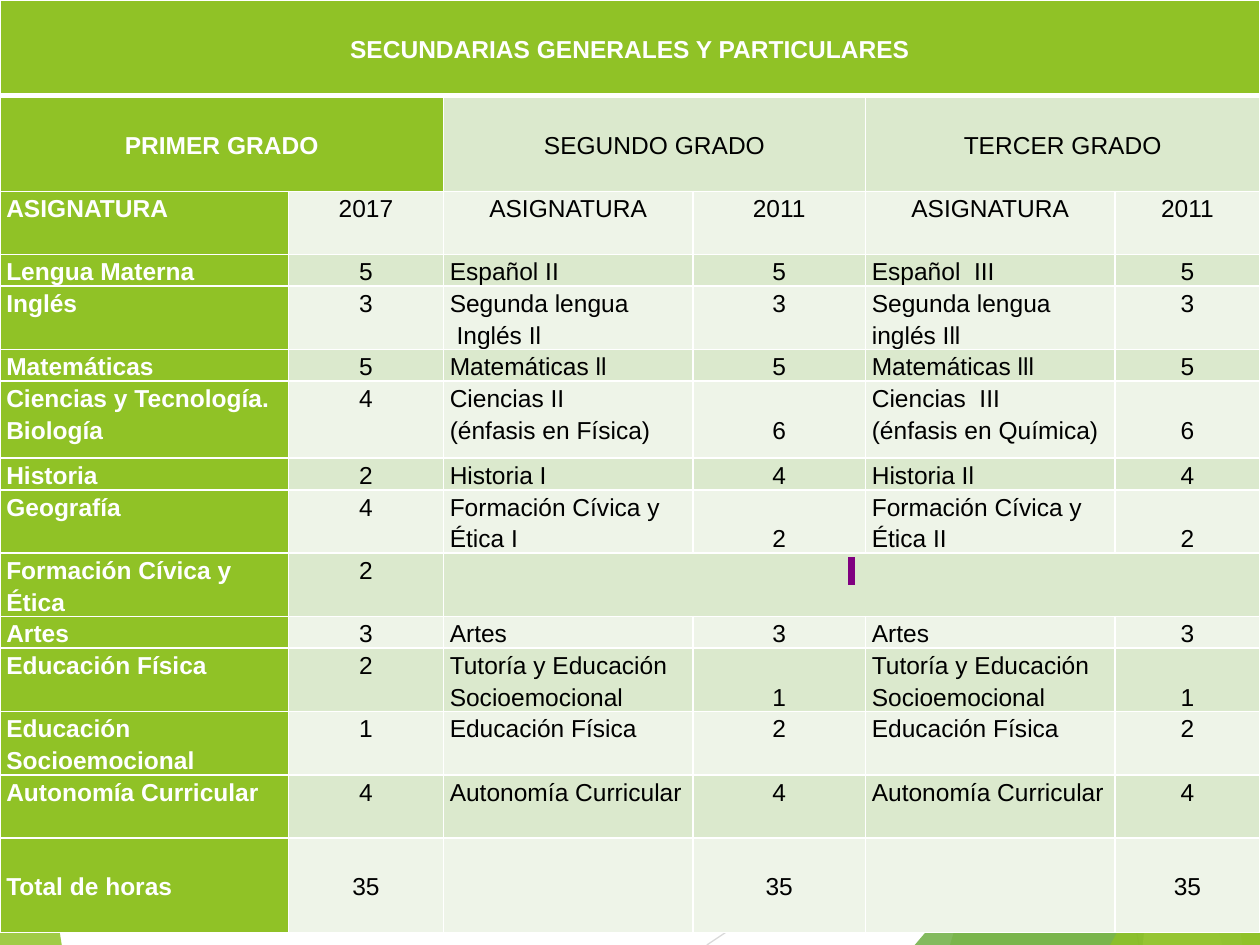
import pptx
import pptx.dml.color
import pptx.enum.shapes
import pptx.enum.text
import pptx.oxml
import pptx.oxml.ns
import pptx.util
from lxml import etree
from pptx.util import Inches

GREEN, PALE, PALER, WHITE, BLACK = "90C226", "DBE9CD", "EEF4E8", "FFFFFF", "000000"
ALIGN = pptx.enum.text.PP_ALIGN
ANCHOR = pptx.enum.text.MSO_ANCHOR

COLUMN_WIDTHS = [2.29, 1.23, 1.98, 1.37, 1.98, 1.15]
ROW_HEIGHTS = [0.76, 0.76, 0.5, 0.25, 0.5, 0.25, 0.61, 0.25,
               0.5, 0.5, 0.25, 0.5, 0.5, 0.5, 0.75]
ROWS = [
    ["SECUNDARIAS GENERALES Y PARTICULARES", "", "", "", "", ""],
    ["PRIMER GRADO", "", "SEGUNDO GRADO", "", "TERCER GRADO", ""],
    ["ASIGNATURA", "2017", "ASIGNATURA", "2011", "ASIGNATURA", "2011"],
    ["Lengua Materna", "5", "Español II", "5", "Español  III", "5"],
    ["Inglés", "3", "Segunda lengua\n Inglés Il", "3", "Segunda lengua  inglés Ill", "3"],
    ["Matemáticas", "5", "Matemáticas ll", "5", "Matemáticas lll", "5"],
    ["Ciencias y Tecnología. Biología", "4", "Ciencias II\n(énfasis en Física)", "6",
     "Ciencias  III\n(énfasis en Química)", "6"],
    ["Historia", "2", "Historia I", "4", "Historia Il", "4"],
    ["Geografía", "4", "Formación Cívica y Ética I", "2", "Formación Cívica y Ética II", "2"],
    ["Formación Cívica y Ética", "2", "", "", "", ""],
    ["Artes", "3", "Artes", "3", "Artes", "3"],
    ["Educación Física", "2", "Tutoría y Educación Socioemocional", "1",
     "Tutoría y Educación Socioemocional", "1"],
    ["Educación Socioemocional", "1", "Educación Física", "2", "Educación Física", "2"],
    ["Autonomía Curricular", "4", "Autonomía Curricular", "4", "Autonomía Curricular", "4"],
    ["Total de horas", "35", "", "35", "", "35"],
]
TITLE_ROW, GRADE_ROW, HEADING_ROW, GAP_ROW, TOTAL_ROW = 0, 1, 2, 9, 14
SECOND_LINE_ROWS = (6, 8, 11)  # hours of 2nd and 3rd grade sit on the second line
MERGES = [(TITLE_ROW, 0, 5), (GRADE_ROW, 0, 1), (GRADE_ROW, 2, 3), (GRADE_ROW, 4, 5),
          (GAP_ROW, 2, 5)]

GUIDE_LINES = [((5.61, 7.5), (10, 4.57), "D9D9D9"), ((7.7, 0), (9.04, 7.5), "BFBFBF")]
LEFT_FACET = ([(0, 4.39), (0.49, 7.5), (0, 7.5)], GREEN, 85)
RIGHT_FACETS = [
    ([(9.75, 0), (7.54, 7.5), (10, 7.5), (10, 0)], GREEN, 30),
    ([(7.88, 0), (9.19, 7.5), (10, 7.5), (10, 0)], GREEN, 20),
    ([(7.26, 7.5), (10, 4.29), (10, 7.5)], "54A021", 72),
    ([(7.67, 0), (9.7, 7.5), (10, 7.5), (10, 0)], "3F7819", 70),
    ([(9.81, 0), (9.07, 7.5), (10, 7.5), (10, 0)], "C0E474", 70),
    ([(8.83, 0), (9.86, 7.5), (10, 7.5), (10, 0)], GREEN, 65),
    ([(8.81, 7.5), (10, 5.35), (10, 7.5)], GREEN, 80),
]


def rgb(value):
    return pptx.dml.color.RGBColor.from_string(value)


def sub(parent, tag, **attrs):
    return etree.SubElement(parent, pptx.oxml.ns.qn(tag), attrs)


def add_facet(s, points, color, opacity):
    corners = [(Inches(x), Inches(y)) for x, y in points]
    builder = s.shapes.build_freeform(*corners[0], scale=1.0)
    builder.add_line_segments(corners[1:], close=True)
    sp = builder.convert_to_shape()
    sp.shadow.inherit = False
    sp.line.fill.background()
    sp.fill.solid()
    sp.fill.fore_color.rgb = rgb(color)
    clr = next(sp.fill._xPr.iter(pptx.oxml.ns.qn("a:srgbClr")))
    sub(clr, "a:alpha", val=str(opacity * 1000))


def add_line(s, start, end, color):
    line = s.shapes.add_connector(pptx.enum.shapes.MSO_CONNECTOR.STRAIGHT,
                                  *(Inches(v) for v in start + end))
    line.line.color.rgb = rgb(color)
    line.line.width = pptx.util.Pt(0.75)
    sub(line._element.spPr, "a:effectLst")


def set_text(tf, text, color=BLACK, bold=False, align=ALIGN.LEFT, size=14):
    for i, part in enumerate(text.split("\n")):
        p = tf.add_paragraph() if i else tf.paragraphs[0]
        p.alignment = align
        p.line_spacing = 1.15
        r = p.add_run()
        r.text = part
        r.font.name = "Arial"
        r.font.size = pptx.util.Pt(size)
        r.font.bold = bold
        r.font.color.rgb = rgb(color)


def highlight(r, color):
    mark = pptx.oxml.parse_xml(
        f'<a:highlight {pptx.oxml.ns.nsdecls("a")}><a:srgbClr val="{color}"/></a:highlight>')
    r.font._element.find(pptx.oxml.ns.qn("a:solidFill")).addnext(mark)


def style_cell(cell, fill, bottom_width):
    """Set insets, white borders and fill; borders go before the fill in the XML."""
    cell.margin_left = cell.margin_right = Inches(0.05)
    cell.margin_top = cell.margin_bottom = 0
    tcPr = cell._tc.get_or_add_tcPr()
    for side in "LRTB":
        width = pptx.util.Pt(bottom_width if side == "B" else 1)
        ln = sub(tcPr, f"a:ln{side}", w=str(width))
        sub(sub(ln, "a:solidFill"), "a:srgbClr", val=WHITE)
    cell.fill.solid()
    cell.fill.fore_color.rgb = rgb(fill)


def fill_cell(cell, row, col, text):
    header = row == TITLE_ROW or col == 0
    band = PALE if row % 2 else PALER
    style_cell(cell, GREEN if header else band, 3 if row == TITLE_ROW else 1)
    if row in (TITLE_ROW, GRADE_ROW, TOTAL_ROW):
        cell.vertical_anchor = ANCHOR.MIDDLE
    if row in SECOND_LINE_ROWS and col in (3, 5):
        cell.margin_top = Inches(0.25)
    centered = col % 2 or row <= GRADE_ROW or (row == HEADING_ROW and col)
    if text:
        set_text(cell.text_frame, text, color=WHITE if header else BLACK, bold=header,
                 align=ALIGN.CENTER if centered else ALIGN.LEFT)


def add_hours_table(s):
    frame = s.shapes.add_table(len(ROWS), len(COLUMN_WIDTHS), 0, 0,
                               Inches(10), Inches(sum(ROW_HEIGHTS)))
    table = frame.table
    for column, width in zip(table.columns, COLUMN_WIDTHS):
        column.width = Inches(width)
    for table_row, height in zip(table.rows, ROW_HEIGHTS):
        table_row.height = Inches(height)
    for row, texts in enumerate(ROWS):
        for col, text in enumerate(texts):
            fill_cell(table.cell(row, col), row, col, text)
    for row, first, last in MERGES:
        table.cell(row, first).merge(table.cell(row, last))
    gap = table.cell(GAP_ROW, 2).text_frame
    set_text(gap, " ", align=ALIGN.CENTER)
    highlight(gap.paragraphs[0].runs[0], "800080")


def main():
    prs = pptx.Presentation()
    prs.slide_width, prs.slide_height = Inches(10), Inches(7.5)
    s = prs.slides.add_slide(prs.slide_layouts[6])
    add_facet(s, *LEFT_FACET)
    for line in GUIDE_LINES:
        add_line(s, *line)
    for facet in RIGHT_FACETS:
        add_facet(s, *facet)
    add_hours_table(s)
    prs.save("out.pptx")


if __name__ == "__main__":
    main()
